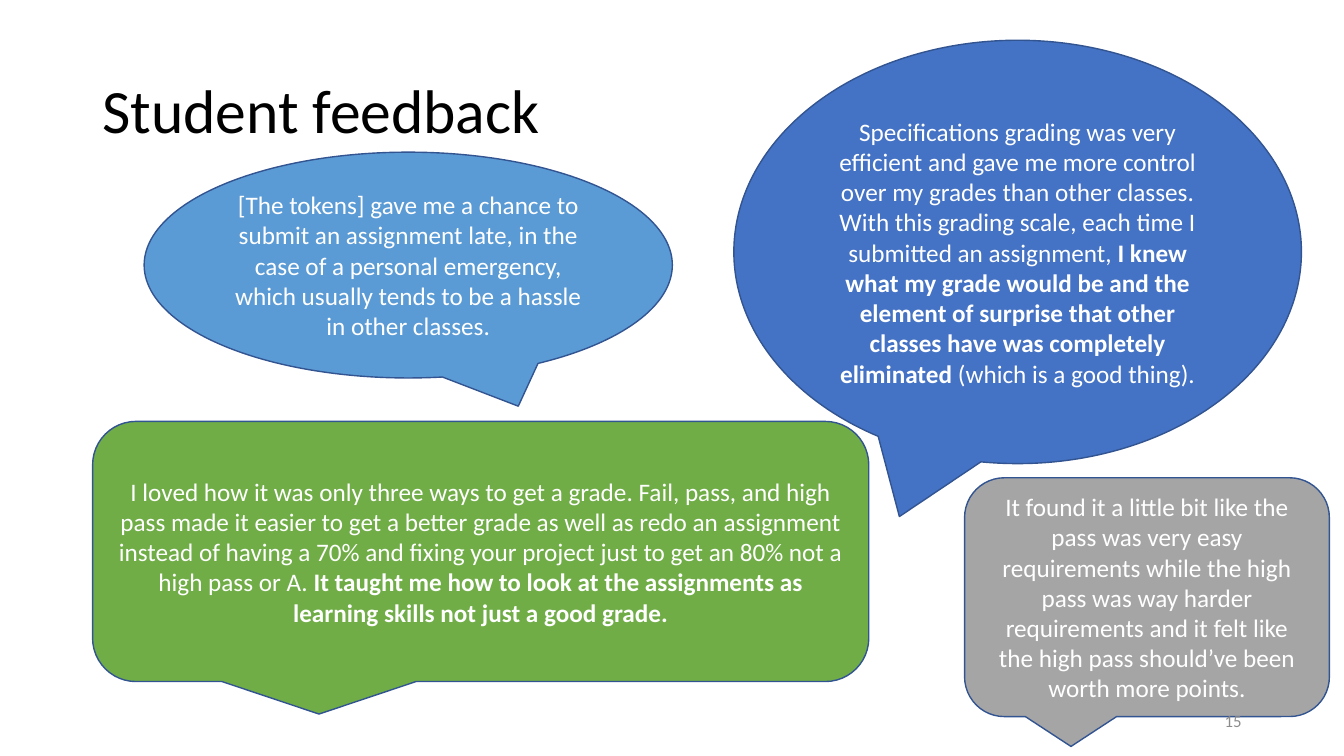
from pptx import Presentation
from pptx.dml.color import RGBColor
from pptx.enum import shapes, text
from pptx.util import Pt

BLACK = RGBColor(0x00, 0x00, 0x00)
WHITE = RGBColor(0xFF, 0xFF, 0xFF)
PAGE_GRAY = RGBColor(0x8C, 0x8C, 0x8C)
OUTLINE = RGBColor(0x32, 0x54, 0x91)
BLUE = RGBColor(0x44, 0x72, 0xC4)
LIGHT_BLUE = RGBColor(0x5B, 0x9B, 0xD5)
GREEN = RGBColor(0x70, 0xAD, 0x47)
GRAY = RGBColor(0xA5, 0xA5, 0xA5)

ELLIPSE = shapes.MSO_SHAPE.OVAL_CALLOUT
ROUNDED = shapes.MSO_SHAPE.ROUNDED_RECTANGULAR_CALLOUT
TAIL_OFFSET = 0.2083

QUOTES = [
    (ELLIPSE, (524.2, 28.8, 405.4, 302.4), BLUE, -TAIL_OFFSET, [
        ("Specifications grading was very efficient and gave me more control over my "
         "grades than other classes. With this grading scale, each time I submitted "
         "an assignment, ", False),
        ("I knew what my grade would be and the element of surprise that other "
         "classes have was completely eliminated ", True),
        ("(which is a good thing).", False)]),
    (ELLIPSE, (103, 108.7, 377.3, 161.3), LIGHT_BLUE, TAIL_OFFSET, [
        ("[The tokens] gave me a chance to submit an assignment late, in the case of "
         "a personal emergency, which usually tends to be a hassle in other classes.",
         False)]),
    (ROUNDED, (66.2, 301, 554.4, 185.8), GREEN, -TAIL_OFFSET, [
        ("I loved how it was only three ways to get a grade. Fail, pass, and high "
         "pass made it easier to get a better grade as well as redo an assignment "
         "instead of having a 70% and fixing your project just to get an 80% not a "
         "high pass or A. ", False),
        ("It taught me how to look at the assignments as learning skills not just a "
         "good grade.", True)]),
    (ROUNDED, (689, 341.3, 260.6, 170.6), GRAY, -TAIL_OFFSET, [
        ("It found it a little bit like the pass was very easy requirements while "
         "the high pass was way harder requirements and it felt like the high pass "
         "should’ve been worth more points.", False)]),
]


def write_text(shape, runs, size, color, alignment):
    frame = shape.text_frame
    frame.word_wrap = True
    frame.vertical_anchor = text.MSO_ANCHOR.MIDDLE
    paragraph = frame.paragraphs[0]
    paragraph.alignment = alignment
    for words, bold in runs:
        run = paragraph.add_run()
        run.text = words
        run.font.name = "Calibri"
        run.font.size = Pt(size)
        run.font.bold = bold
        run.font.color.rgb = color
    return paragraph


def add_label(slide, box, words, size, color, alignment):
    shape = slide.shapes.add_textbox(*map(Pt, box))
    return write_text(shape, [(words, False)], size, color, alignment)


def add_callout(slide, kind, box, fill, tail, runs):
    shape = slide.shapes.add_shape(kind, *map(Pt, box))
    shape.shadow.inherit = False
    shape.adjustments[0] = tail
    shape.adjustments[1] = 0.625
    shape.fill.solid()
    shape.fill.fore_color.rgb = fill
    shape.line.color.rgb = OUTLINE
    shape.line.width = Pt(1)
    write_text(shape, runs, 18, WHITE, text.PP_ALIGN.CENTER)


def main():
    presentation = Presentation()
    presentation.slide_width = Pt(960)
    presentation.slide_height = Pt(540)
    slide = presentation.slides.add_slide(presentation.slide_layouts[6])

    title = add_label(slide, (66, 28.8, 828, 104.4), "Student feedback", 44, BLACK,
                      text.PP_ALIGN.LEFT)
    title.line_spacing = 0.9
    for quote in QUOTES:
        add_callout(slide, *quote)
    add_label(slide, (678, 500.5, 216, 28.8), "15", 12, PAGE_GRAY, text.PP_ALIGN.RIGHT)

    presentation.save("out.pptx")


if __name__ == "__main__":
    main()
